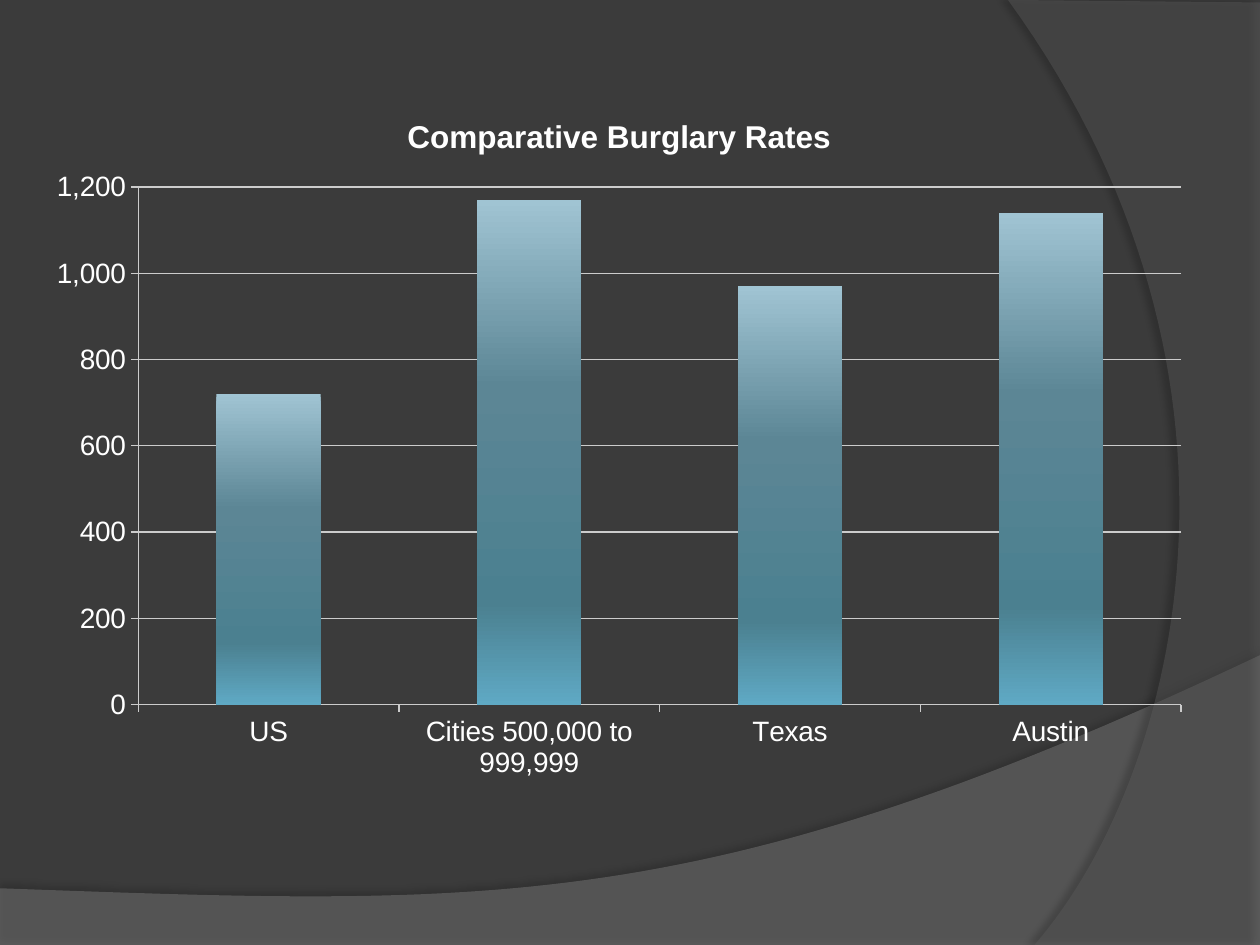
from lxml import etree
from pptx import Presentation
from pptx import util as u
from pptx.chart.data import CategoryChartData
from pptx.dml.color import RGBColor
from pptx.enum import chart as ch
from pptx.oxml import parse_xml
from pptx.oxml.ns import qn

COLORS = {"background": "3B3B3B", "wave": "7F7F7F", "arc": "5E5E5E",
          "shadow": "000000", "label": "FFFFFF", "rule": "CCCCCC"}
BAR_GRADIENT = [(0, "A0C4D3"), (37, "5C8695"), (80, "4B8090"), (100, "5FA9C4")]
TITLE = "Comparative Burglary Rates"
RATES = {"US": 720, "Cities 500,000 to 999,999": 1170, "Texas": 970, "Austin": 1140}
PLOT_SHARES = {"x": 0.089, "y": 0.139, "w": 0.891, "h": 0.736}
SWOOSHES = [
    {"color": "wave", "alpha": 45, "shadow": (35, 4, 3.5, 270),
     "before": [(0, 7.05), (0, 7.51), (10, 7.51)],
     "curve": [(10, 5.2), (5.59, 7.29), (3.91, 7.19), (0, 7.05)]},
    {"color": "arc", "alpha": 40, "shadow": (45, 4, 4, 180),
     "before": [(10, 0.02), (10, 7.5)],
     "curve": [(8.21, 7.5), (9.35, 6.19), (10.18, 3), (8, 0)]},
]
CURVE_STEPS = 60
A_NS = 'xmlns:a="http://schemas.openxmlformats.org/drawingml/2006/main"'


def rgb(name):
    return RGBColor.from_string(COLORS[name])


def format_with(target, values):
    for name, value in values.items():
        setattr(target, name, value)


def bezier(controls):
    for step in range(CURVE_STEPS + 1):
        t = step / CURVE_STEPS
        weights = ((1 - t) ** 3, 3 * t * (1 - t) ** 2, 3 * t * t * (1 - t), t ** 3)
        yield tuple(sum(w * p[axis] for w, p in zip(weights, controls)) for axis in (0, 1))


def add_swoosh(slide, swoosh):
    outline = [(u.Inches(x), u.Inches(y))
               for x, y in [*swoosh["before"], *bezier(swoosh["curve"])]]
    builder = slide.shapes.build_freeform(*outline[0])
    builder.add_line_segments(outline[1:], close=True)
    shape = builder.convert_to_shape()
    shape.shadow.inherit = False
    shape.fill.solid()
    shape.fill.fore_color.rgb = rgb(swoosh["color"])
    shape.line.fill.background()
    properties = shape.element.spPr
    fill_color = properties.find(qn("a:solidFill"))[0]
    etree.SubElement(fill_color, qn("a:alpha"), val=str(swoosh["alpha"] * 1000))
    alpha, blur, distance, angle = swoosh["shadow"]
    properties.find(qn("a:effectLst")).append(parse_xml(
        f'<a:outerShdw {A_NS} blurRad="{u.Pt(blur)}" dist="{u.Pt(distance)}" '
        f'dir="{angle * 60000}" algn="ctr" rotWithShape="0">'
        f'<a:srgbClr val="{COLORS["shadow"]}"><a:alpha val="{alpha * 1000}"/></a:srgbClr>'
        '</a:outerShdw>'))


def fill_bars(series):
    stops = "".join(f'<a:gs pos="{share * 1000}"><a:srgbClr val="{color}"/></a:gs>'
                    for share, color in BAR_GRADIENT)
    series.format.fill.gradient()
    properties = series.format.fill._xPr
    properties.replace(properties.find(qn("a:gradFill")), parse_xml(
        f'<a:gradFill {A_NS} rotWithShape="1"><a:gsLst>{stops}</a:gsLst>'
        '<a:lin ang="5400000" scaled="0"/></a:gradFill>'))


def place_plot(chart):
    plot_area = chart.element.chart.plotArea
    for old in plot_area.findall(qn("c:layout")):
        plot_area.remove(old)
    layout = etree.Element(qn("c:layout"))
    manual = etree.SubElement(layout, qn("c:manualLayout"))
    settings = {"layoutTarget": "inner", "xMode": "edge", "yMode": "edge", **PLOT_SHARES}
    for name, value in settings.items():
        etree.SubElement(manual, qn(f"c:{name}"), val=str(value))
    plot_area.insert(0, layout)


def add_rates_chart(slide):
    data = CategoryChartData(number_format="#,##0")
    data.categories = list(RATES)
    data.add_series("Series 1", list(RATES.values()))
    frame = [u.Inches(length) for length in (0.27, 0.71, 9.29, 5.58)]
    chart = slide.shapes.add_chart(ch.XL_CHART_TYPE.COLUMN_CLUSTERED, *frame, data).chart
    format_with(chart.font, {"name": "Arial", "size": u.Pt(10)})
    chart.font.color.rgb = rgb("label")
    chart.has_legend = False

    chart.has_title = True
    heading = chart.chart_title.text_frame
    heading.text = TITLE
    heading_font = heading.paragraphs[0].runs[0].font
    format_with(heading_font, {"name": "Arial", "size": u.Pt(18), "bold": True})
    heading_font.color.rgb = rgb("label")
    chart.chart_title.include_in_layout = False

    rates = chart.value_axis
    format_with(rates, {"minimum_scale": 0, "maximum_scale": 1200,
                        "major_unit": 200, "has_major_gridlines": True})
    format_with(rates.tick_labels, {"number_format": "#,##0",
                                    "number_format_is_linked": False})
    for axis in (rates, chart.category_axis):
        axis.major_tick_mark = ch.XL_TICK_MARK.OUTSIDE
        axis.tick_labels.font.size = u.Pt(16)
    for ruled in (rates, chart.category_axis, rates.major_gridlines):
        ruled.format.line.color.rgb = rgb("rule")
        ruled.format.line.width = u.Pt(0.75)

    bars = chart.plots[0]
    format_with(bars, {"gap_width": 150, "vary_by_categories": False})
    fill_bars(bars.series[0])
    place_plot(chart)


def main():
    deck = Presentation()
    format_with(deck, {"slide_width": u.Inches(10), "slide_height": u.Inches(7.5)})
    slide = deck.slides.add_slide(deck.slide_layouts[6])
    slide.background.fill.solid()
    slide.background.fill.fore_color.rgb = rgb("background")
    for swoosh in SWOOSHES:
        add_swoosh(slide, swoosh)
    add_rates_chart(slide)
    deck.save("out.pptx")


if __name__ == "__main__":
    main()
